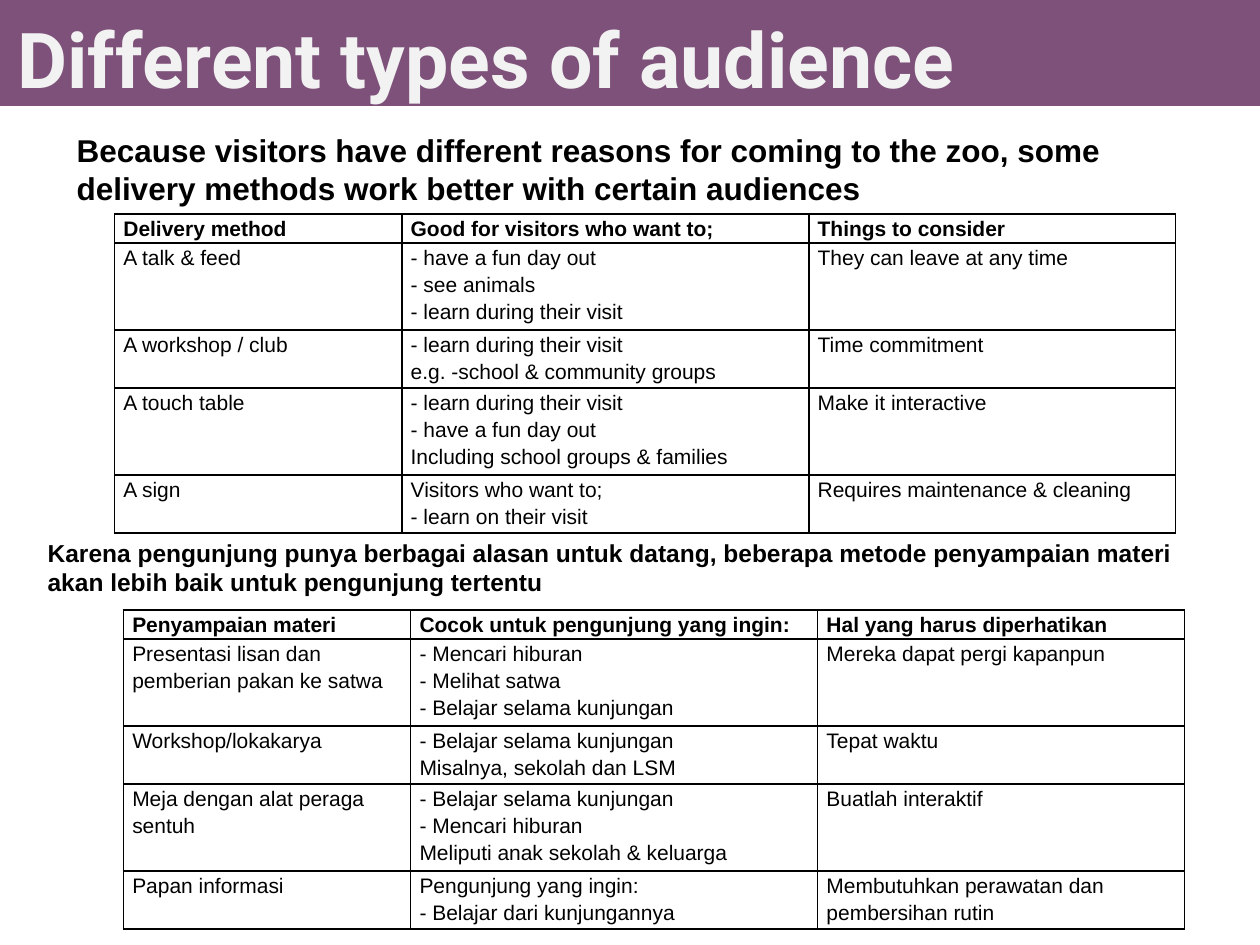
from pptx import Presentation
from pptx.dml.color import RGBColor
from pptx.enum import shapes, text
from pptx.oxml import parse_xml
from pptx.oxml.ns import nsdecls
from pptx.util import Inches, Pt

THEME = {
    "purple": "7D5179", "light": "F2F2F2", "black": "000000",
    "title_font": "Roboto", "body_font": "Arial",
    "title": 44, "lead": 18, "second_lead": 14, "table": 12,
}

TITLE = "Different types of audience"
LEAD = ("Because visitors have different reasons for coming to the zoo, "
        "some delivery methods work better with certain audiences")
SECOND_LEAD = ("Karena pengunjung punya berbagai alasan untuk datang, beberapa metode "
               "penyampaian materi akan lebih baik untuk pengunjung tertentu")

ENGLISH = [
    ("Delivery method", "Good for visitors who want to;", "Things to consider"),
    ("A talk & feed",
     "- have a fun day out\n- see animals\n- learn during their visit",
     "They can leave at any time"),
    ("A workshop / club",
     "- learn during their visit\ne.g. -school & community groups",
     "Time commitment"),
    ("A touch table",
     "- learn during their visit\n- have a fun day out\nIncluding school groups & families",
     "Make it interactive"),
    ("A sign", "Visitors who want to;\n- learn on their visit",
     "Requires maintenance & cleaning"),
]
INDONESIAN = [
    ("Penyampaian materi", "Cocok untuk pengunjung yang ingin:", "Hal yang harus diperhatikan"),
    ("Presentasi lisan dan pemberian pakan ke satwa",
     "- Mencari hiburan\n- Melihat satwa\n- Belajar selama kunjungan",
     "Mereka dapat pergi kapanpun"),
    ("Workshop/lokakarya",
     "- Belajar selama kunjungan\nMisalnya, sekolah dan LSM",
     "Tepat waktu"),
    ("Meja dengan alat peraga sentuh",
     "- Belajar selama kunjungan\n- Mencari hiburan\nMeliputi anak sekolah & keluarga",
     "Buatlah interaktif"),
    ("Papan informasi", "Pengunjung yang ingin:\n- Belajar dari kunjungannya",
     "Membutuhkan perawatan dan pembersihan rutin"),
]

COLUMN_WIDTHS = (2.28, 3.23, 2.91)
LINE_HEIGHT = 0.21


def add_run(paragraph, words, size, font="body_font", color="black", bold=True):
    run = paragraph.add_run()
    run.text = words
    run.font.name = THEME[font]
    run.font.size = Pt(THEME[size])
    run.font.bold = bold
    run.font.color.rgb = RGBColor.from_string(THEME[color])


def add_text(slide, box, words, size, **style):
    frame = slide.shapes.add_textbox(*map(Inches, box)).text_frame
    frame.word_wrap = True
    add_run(frame.paragraphs[0], words, size, **style)


def add_borders(cell):
    properties = cell._tc.get_or_add_tcPr()
    for index, side in enumerate(("lnL", "lnR", "lnT", "lnB")):
        properties.insert(index, parse_xml(
            f'<a:{side} {nsdecls("a")} w="{Pt(1)}"><a:solidFill>'
            f'<a:srgbClr val="{THEME["black"]}"/></a:solidFill></a:{side}>'))


def fill_cell(cell, words, bold):
    cell.fill.background()
    cell.margin_left = cell.margin_right = Inches(0.07)
    cell.margin_top = cell.margin_bottom = 0
    cell.vertical_anchor = text.MSO_ANCHOR.TOP
    frame = cell.text_frame
    for index, line in enumerate(words.split("\n")):
        paragraph = frame.add_paragraph() if index else frame.paragraphs[0]
        paragraph.line_spacing = 1.15
        add_run(paragraph, line, "table", bold=bold)
    add_borders(cell)


def add_methods_table(slide, left, top, rows):
    line_counts = [max(words.count("\n") + 1 for words in row) for row in rows]
    table = slide.shapes.add_table(
        len(rows), len(COLUMN_WIDTHS), Inches(left), Inches(top),
        Inches(sum(COLUMN_WIDTHS)), Inches(sum(line_counts) * LINE_HEIGHT)).table
    table.horz_banding = False
    for column, width in zip(table.columns, COLUMN_WIDTHS):
        column.width = Inches(width)
    for row_index, (row, count) in enumerate(zip(rows, line_counts)):
        table.rows[row_index].height = Inches(count * LINE_HEIGHT)
        for column_index, words in enumerate(row):
            fill_cell(table.cell(row_index, column_index), words, row_index == 0)


def main():
    """Build the slide on delivery methods for different audiences."""
    presentation = Presentation()
    presentation.slide_width, presentation.slide_height = Inches(10), Inches(7.5)
    slide = presentation.slides.add_slide(presentation.slide_layouts[6])

    banner = slide.shapes.add_shape(
        shapes.MSO_SHAPE.RECTANGLE, 0, 0, Inches(10), Inches(0.84))
    banner.shadow.inherit = False
    banner.fill.solid()
    banner.fill.fore_color.rgb = RGBColor.from_string(THEME["purple"])
    banner.line.fill.background()

    add_text(slide, (0.51, 0.99, 9, 1.65), LEAD, "lead")
    add_text(slide, (0.04, 0.04, 8.5, 1.61), TITLE, "title", font="title_font", color="light")
    add_methods_table(slide, 0.91, 1.7, ENGLISH)
    add_methods_table(slide, 0.98, 4.84, INDONESIAN)
    add_text(slide, (0.28, 4.22, 9.53, 0.57), SECOND_LEAD, "second_lead")

    presentation.save("out.pptx")


if __name__ == "__main__":
    main()
